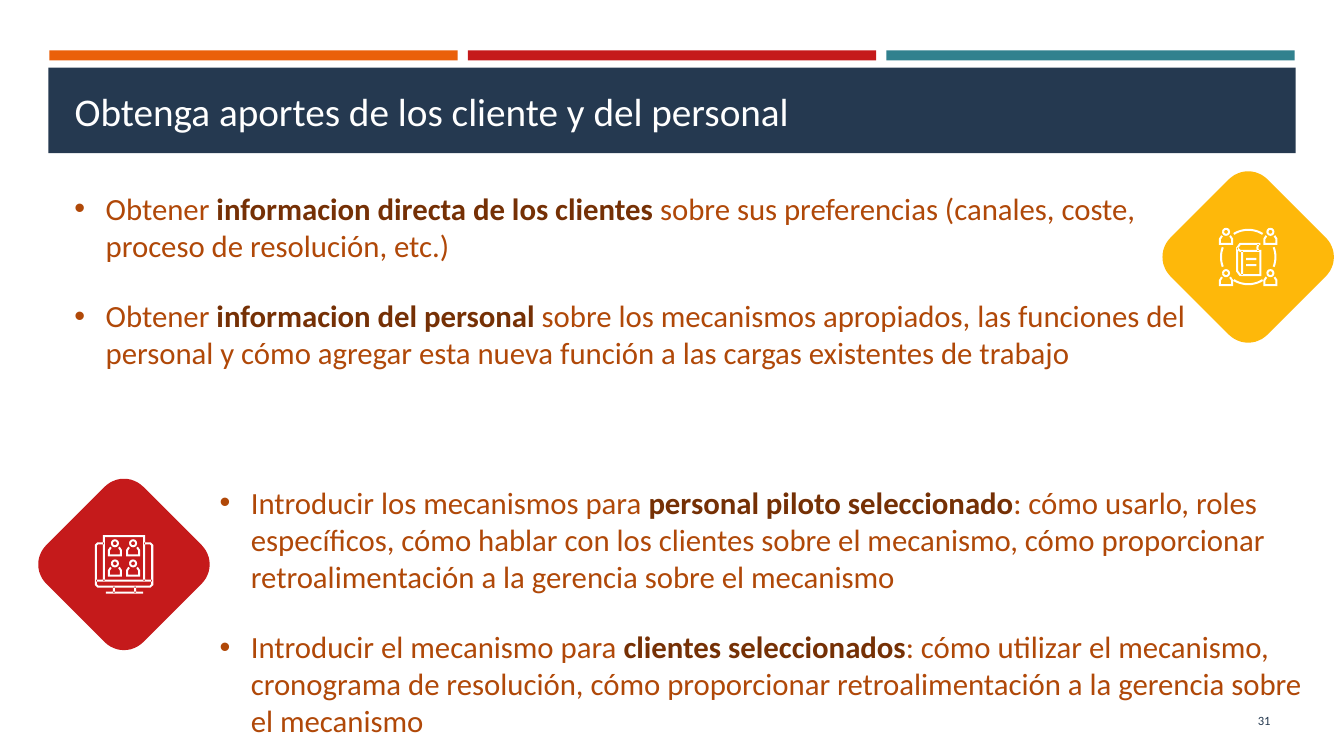
from math import cos, hypot, radians, sin

from lxml import etree
from pptx import Presentation
from pptx.dml.color import RGBColor
from pptx.enum.shapes import MSO_SHAPE
from pptx.enum.text import MSO_ANCHOR, PP_ALIGN
from pptx.oxml.ns import qn
from pptx.util import Inches, Pt

RECT = MSO_SHAPE.RECTANGLE
MIDDLE, BOTTOM = MSO_ANCHOR.MIDDLE, MSO_ANCHOR.BOTTOM
LEFT, RIGHT = PP_ALIGN.LEFT, PP_ALIGN.RIGHT
FONT = "Calibri"
INK = {"orange": "EA600A", "red": "C51A1B", "teal": "31818E", "navy": "253950",
       "gold": "FEB80A", "white": "FFFFFF", "text": "B04808", "strong": "753005"}

TITLE = "Obtenga aportes de los cliente y del personal"
NUMBER = "31"
BARS = ["orange", "red", "teal"]
# Each bullet: plain start, bold middle, plain end
LISTS = [
    ((0.64, 1.83, 11.75, 1.92), [
        ("Obtener ", "informacion directa de los clientes ",
         "sobre sus preferencias (canales, coste, proceso de resolución, etc.)"),
        ("Obtener ", "informacion del personal",
         " sobre los mecanismos apropiados, las funciones del personal y cómo "
         "agregar esta nueva función a las cargas existentes de trabajo"),
    ]),
    ((2.08, 4.75, 11, 2.66), [
        ("Introducir los mecanismos para ", "personal piloto seleccionado",
         ": cómo usarlo, roles específicos, cómo hablar con los clientes sobre el "
         "mecanismo, cómo proporcionar retroalimentación a la gerencia sobre el mecanismo"),
        ("Introducir el mecanismo para ", "clientes seleccionados",
         ": cómo utilizar el mecanismo, cronograma de resolución, cómo proporcionar "
         "retroalimentación a la gerencia sobre el mecanismo"),
    ]),
]

# Icon strokes in inches from the icon's top left corner
ICON, PEN = 0.58, 0.02
BOOK = [
    [(0.41, 0.16), (0.21, 0.16), (0.18, 0.2), (0.18, 0.43), (0.21, 0.47),
     (0.41, 0.47), (0.41, 0.23), (0.21, 0.23), (0.18, 0.2)],
    [(0.39, 0.16), (0.38, 0.2), (0.39, 0.23)],
    [(0.23, 0.23), (0.23, 0.47)],
    [(0.27, 0.31), (0.37, 0.31)],
    [(0.27, 0.37), (0.37, 0.37)],
]
SCREEN = [
    [(0.09, 0.45), (0.09, 0.01), (0.49, 0.01), (0.49, 0.45)],
    [(0.09, 0.08), (0.03, 0.08), (0.01, 0.1), (0.01, 0.49), (0.03, 0.51),
     (0.55, 0.51), (0.57, 0.49), (0.57, 0.1), (0.55, 0.08), (0.49, 0.08)],
    [(0.01, 0.45), (0.57, 0.45)],
    [(0.19, 0.51), (0.19, 0.57)],
    [(0.4, 0.51), (0.4, 0.57)],
    [(0.11, 0.57), (0.48, 0.57)],
]
BODY = [(-0.04, 0.04), (-0.06, 0.07), (-0.06, 0.12),
        (0.06, 0.12), (0.06, 0.07), (0.04, 0.04)]
# Angle of the middle and half the spread of each arc around the book
ARCS = [(0, 21), (90, 32), (180, 21), (270, 32)]
# Centre, colour, strokes, head columns, head rows
BADGES = [
    ((12.38, 2.55), "gold", BOOK, ARCS, (0.07, 0.51), (0.04, 0.45)),
    ((1.23, 5.6), "red", SCREEN, [], (0.2, 0.38), (0.08, 0.28)),
]


def tint(name):
    return RGBColor.from_string(INK[name])


def paint(shape, color):
    shape.shadow.inherit = False
    shape.fill.solid()
    shape.fill.fore_color.rgb = tint(color)
    shape.line.fill.background()


def block(box, color):
    paint(slide.shapes.add_shape(RECT, *map(Inches, box)), color)


def arc(x, y, radius, mid, half, steps=6):
    """Points along an arc that spreads half to each side of angle mid."""
    turns = [radians(mid + half * k / steps) for k in range(-steps, steps + 1)]
    return [(x + radius * cos(t), y + radius * sin(t)) for t in turns]


def shift(points, x, y):
    return [(x + a, y + b) for a, b in points]


def band(points):
    """Outline of a line of width PEN along points."""
    norms = []
    for (a, b), (c, d) in zip(points, points[1:]):
        size = hypot(c - a, d - b)
        norms.append(((b - d) / size, (c - a) / size))
    sides = [[], []]
    for (x, y), (a, b), (c, d) in zip(points, norms[:1] + norms, norms + norms[-1:]):
        reach = PEN / 2 / (1 + a * c + b * d)
        for side, sign in zip(sides, (1, -1)):
            side.append((x + sign * reach * (a + c), y + sign * reach * (b + d)))
    return sides[0] + sides[1][::-1]


def outline(loops, color):
    """Draw closed loops as one filled shape."""
    mils = [[(1000 * x, 1000 * y) for x, y in loop] for loop in loops]
    path = slide.shapes.build_freeform(*mils[0][0], scale=914.4)
    for i, loop in enumerate(mils):
        if i:
            path.move_to(*loop[0])
        path.add_line_segments(loop[1:], close=True)
    paint(path.convert_to_shape(), color)


def badge(mid, color, strokes, arcs, cols, rows):
    x, y = mid
    tile = []
    for turn in (0, 90, 180, 270):
        way = radians(turn)
        tile += arc(x + 0.58 * cos(way), y + 0.58 * sin(way), 0.27, turn, 45)
    outline([tile], color)
    lines = strokes + [arc(ICON / 2, ICON / 2, 0.27, *spread) for spread in arcs]
    for col in cols:
        for row in rows:
            lines += [arc(col, row, 0.03, 0, 180), shift(BODY, col, row)]
    left, top = x - ICON / 2, y - ICON / 2
    outline([shift(band(line), left, top) for line in lines], "white")


def style(font, size, color, bold=False):
    font.name, font.size, font.bold = FONT, Pt(size), bold
    font.color.rgb = tint(color)


def bullet(para):
    props = para._p.get_or_add_pPr()
    props.set("marL", str(Inches(0.31)))
    props.set("indent", str(-Inches(0.31)))
    etree.SubElement(props, qn("a:buFont")).set("typeface", "Arial")
    etree.SubElement(props, qn("a:buChar")).set("char", "•")


def textbox(box):
    frame = slide.shapes.add_textbox(*map(Inches, box)).text_frame
    frame.word_wrap = True
    return frame


def write(box, items):
    frame = textbox(box)
    for i, parts in enumerate(items):
        para = frame.add_paragraph() if i else frame.paragraphs[0]
        bullet(para)
        para.space_before = Pt(12 if i else 0)
        para.space_after = Pt(12)
        for k, part in enumerate(parts):
            run = para.add_run()
            run.text = part
            style(run.font, 22, "strong" if k == 1 else "text", k == 1)


def label(frame, text, size, color, anchor, align):
    frame.text = text
    frame.vertical_anchor = anchor
    para = frame.paragraphs[0]
    para.alignment = align
    style(para.runs[0].font, size, color)


deck = Presentation()
deck.slide_width, deck.slide_height = Inches(13.33), Inches(7.5)
slide = deck.slides.add_slide(deck.slide_layouts[5])

for i, color in enumerate(BARS):
    block((0.49 + 4.15 * i, 0.5, 4.05, 0.1), color)
block((0.48, 0.67, 12.37, 0.85), "navy")
label(textbox((11.55, 6.95, 1.15, 0.4)), NUMBER, 9, "navy", MIDDLE, RIGHT)

title = slide.shapes.title
title.left, title.top, title.width, title.height = map(Inches, (0.64, 0.77, 12.06, 0.61))
label(title.text_frame, TITLE, 28, "white", BOTTOM, LEFT)
slide.shapes._spTree.append(title._element)  # in front of the band

for box, items in LISTS:
    write(box, items)
for item in BADGES:
    badge(*item)

deck.save("out.pptx")
